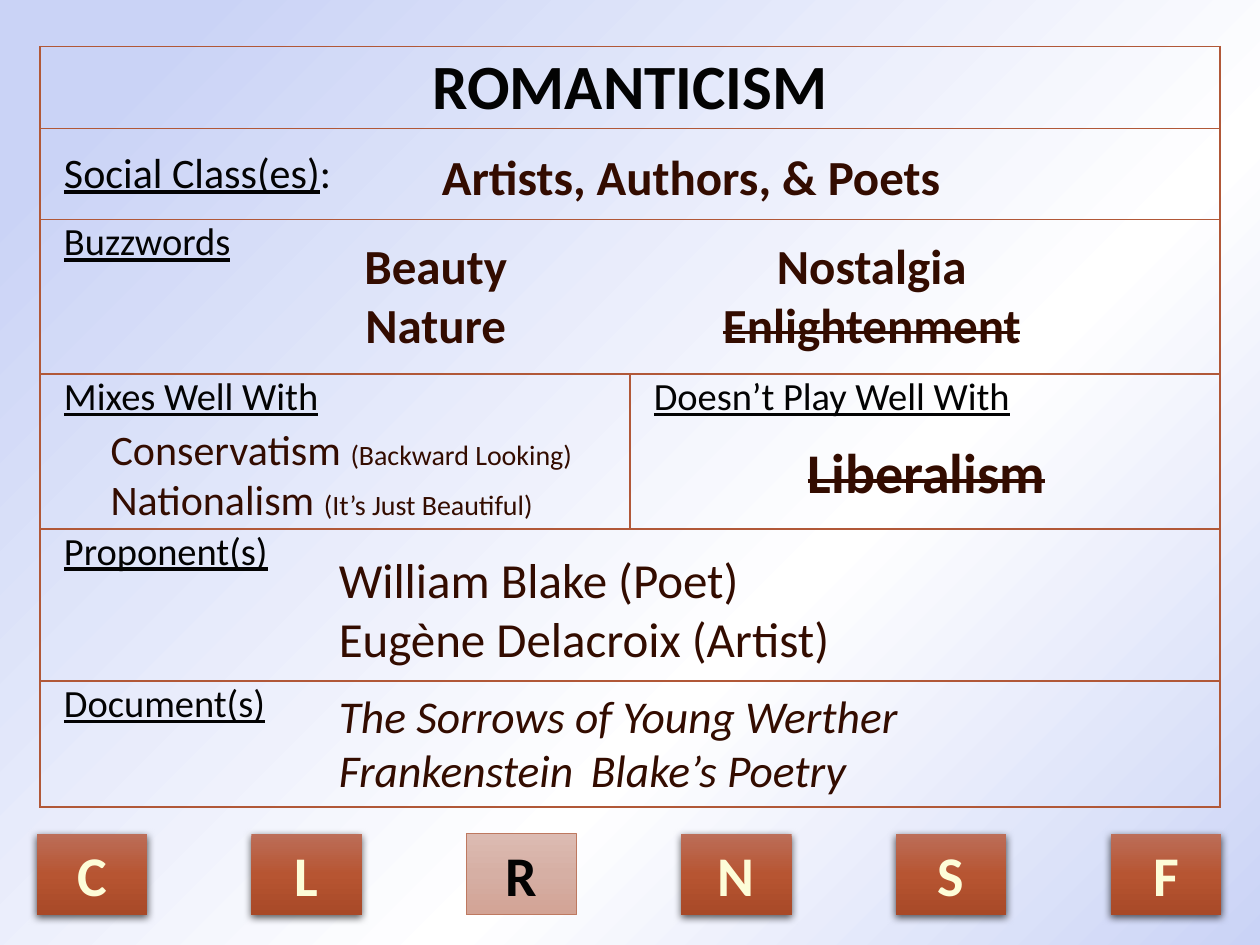
import copy
from dataclasses import dataclass

import lxml.etree
import pptx
import pptx.dml.color
import pptx.enum.shapes
import pptx.enum.text
import pptx.oxml.ns
import pptx.util

Cm = pptx.util.Cm
Pt = pptx.util.Pt
qn = pptx.oxml.ns.qn
ALIGN = pptx.enum.text.PP_ALIGN
ANCHOR = pptx.enum.text.MSO_ANCHOR
SIZING = pptx.enum.text.MSO_AUTO_SIZE


@dataclass(frozen=True)
class Theme:
    font: str = "Calibri"
    black: str = "030303"
    brown: str = "330C00"
    cream: str = "FDFDD8"
    grid: str = "B15838"
    edge: str = "BE7960"
    back: tuple = ((9, "CAD3F6"), (63, "FFFFFF"), (100, "CAD3F6"))
    rust: tuple = ((0, "BC6E59"), (50, "B75532"), (100, "A84927"))
    pale: tuple = ((0, "DCBBB2"), (50, "D6AFA4"), (100, "D2A395"))
    title: int = 36
    head: int = 32
    large: int = 28
    work: int = 26
    body: int = 24
    label: int = 22
    note: int = 16


THEME = Theme()


@dataclass(frozen=True)
class Run:
    text: str
    size: int
    color: str = THEME.brown
    bold: bool = False
    slant: bool = False
    under: bool = False
    strike: bool = False


@dataclass(frozen=True)
class Label:
    row: int
    col: int
    runs: tuple
    merge: bool = True
    align: object = ALIGN.LEFT
    middle: bool = False
    indent: float = 0.33
    before: float = 3


@dataclass(frozen=True)
class Box:
    left: float
    top: float
    width: float
    height: float
    lines: tuple
    align: object = ALIGN.LEFT
    wrap: bool = True
    indent: float = 0
    tab: float = 0
    split: bool = False


def tint(text: str):
    return pptx.dml.color.RGBColor.from_string(text)


def node(parent, tag: str, **attrs):
    return lxml.etree.SubElement(parent, qn(tag), attrs)


def blend(owner, fill, stops: tuple, angle: int) -> None:
    fill.gradient()
    fill.gradient_angle = angle
    group = next(owner.iter(qn("a:gsLst")))
    group.append(copy.deepcopy(group[-1]))
    for stop, (place, color) in zip(fill.gradient_stops, stops):
        stop.position = place / 100
        stop.color.rgb = tint(color)


def write(para, runs: tuple) -> None:
    for item in runs:
        run = para.add_run()
        run.text = item.text
        font = run.font
        font.name = THEME.font
        font.size = Pt(item.size)
        font.color.rgb = tint(item.color)
        font.bold = item.bold
        font.italic = item.slant
        font.underline = item.under
        if item.strike:
            run._r.get_or_add_rPr().set("strike", "sngStrike")


def inset(para, width: float) -> None:
    props = para._p.get_or_add_pPr()
    props.set("marL", str(Cm(width)))
    props.set("indent", "0")


def border(cell) -> None:
    props = cell._tc.get_or_add_tcPr()
    for place, side in enumerate(("a:lnL", "a:lnR", "a:lnT", "a:lnB")):
        line = lxml.etree.Element(qn(side), {"w": str(Pt(1))})
        node(node(line, "a:solidFill"), "a:srgbClr", val=THEME.grid)
        props.insert(place, line)


def draw_table(slide, rows: tuple, labels: tuple) -> None:
    width = 11.89
    table = slide.shapes.add_table(
        len(rows), 2, Cm(0.81), Cm(0.94), Cm(2 * width), Cm(sum(rows))
    ).table
    table.first_row = table.horz_banding = False
    for col in table.columns:
        col.width = Cm(width)
    for row, height in zip(table.rows, rows):
        row.height = Cm(height)
    for cell in table.iter_cells():
        cell.fill.background()
        border(cell)
        cell.margin_left = cell.margin_right = Cm(0.15)
        cell.margin_top = cell.margin_bottom = 0
    for label in labels:
        cell = table.cell(label.row, label.col)
        if label.merge:
            cell.merge(table.cell(label.row, 1))
        cell.vertical_anchor = ANCHOR.MIDDLE if label.middle else ANCHOR.TOP
        para = cell.text_frame.paragraphs[0]
        para.alignment = label.align
        para.space_before = Pt(label.before)
        inset(para, label.indent)
        write(para, label.runs)


def draw_box(slide, box: Box) -> None:
    shape = slide.shapes.add_textbox(
        Cm(box.left), Cm(box.top), Cm(box.width), Cm(box.height)
    )
    frame = shape.text_frame
    frame.word_wrap = box.wrap
    frame.auto_size = SIZING.SHAPE_TO_FIT_TEXT
    if box.split:
        frame.auto_size = SIZING.NONE
        frame.margin_bottom = Cm(1)
        frame._txBody.bodyPr.set("numCol", "2")
    for count, runs in enumerate(box.lines):
        para = frame.add_paragraph() if count else frame.paragraphs[0]
        para.alignment = box.align
        inset(para, box.indent)
        if box.tab:
            tabs = node(para._p.get_or_add_pPr(), "a:tabLst")
            node(tabs, "a:tab", pos=str(Cm(box.tab)), algn="l")
        write(para, runs)


def draw_key(slide, left: float, text: str, chosen: bool) -> None:
    shape = slide.shapes.add_shape(
        pptx.enum.shapes.MSO_SHAPE.RECTANGLE,
        Cm(left), Cm(16.81), Cm(2.23), Cm(1.63),
    )
    props = shape._element.spPr
    blend(props, shape.fill, THEME.pale if chosen else THEME.rust, 270)
    shape.shadow.inherit = False
    if chosen:
        shape.line.color.rgb = tint(THEME.edge)
        shape.line.width = Pt(0.5)
    else:
        shape.line.fill.background()
        shade = node(
            props.find(qn("a:effectLst")), "a:outerShdw",
            blurRad=str(Pt(4.5)), dist=str(Pt(1.5)), dir="5400000", rotWithShape="0",
        )
        node(node(shade, "a:srgbClr", val="000000"), "a:alpha", val="63000")
    para = shape.text_frame.paragraphs[0]
    para.alignment = ALIGN.CENTER
    color = THEME.black if chosen else THEME.cream
    write(para, (Run(text, THEME.head, color, bold=True),))


def tag(text: str) -> tuple:
    return (Run(text, THEME.label, THEME.black, under=True),)


def big(text: str, **style) -> tuple:
    return (Run(text, THEME.large, **style),)


def pair(text: str, note: str) -> tuple:
    return (Run(text, THEME.body), Run(note, THEME.note))


ROWS = (1.65, 1.83, 3.12, 3.12, 3.07, 2.54)
LABELS = (
    Label(0, 0, (Run("ROMANTICISM", THEME.title, THEME.black, bold=True),),
          align=ALIGN.CENTER, middle=True, indent=0, before=0),
    Label(1, 0, (Run("Social Class(es)", THEME.body, THEME.black, under=True),
                 Run(":", THEME.body, THEME.black)), middle=True, before=0),
    Label(2, 0, tag("Buzzwords")),
    Label(3, 0, tag("Mixes Well With"), merge=False),
    Label(3, 1, tag("Doesn’t Play Well With"), merge=False),
    Label(4, 0, tag("Proponent(s)")),
    Label(5, 0, tag("Document(s)")),
)
BOXES = (
    Box(8.43, 2.82, 11.4, 1.45, (big("Artists, Authors, & Poets", bold=True),),
        wrap=False, indent=0.23),
    Box(1.98, 8.41, 10.77, 2.31, (pair("Conservatism ", "(Backward Looking)"),
                                  pair("Nationalism ", "(It’s Just Beautiful)"))),
    Box(12.7, 8.69, 11.96, 1.63,
        ((Run("Liberalism", THEME.head, bold=True, strike=True),),), ALIGN.CENTER),
    Box(6.58, 10.95, 14.43, 2.64,
        (big("William Blake (Poet)"), big("Eugène Delacroix (Artist)"))),
    Box(6.58, 13.74, 15.14, 2.49,
        ((Run("The Sorrows of Young Werther", THEME.work, slant=True),),
         (Run("Frankenstein\tBlake’s Poetry", THEME.work, slant=True),)), tab=7.62),
    Box(4.14, 4.62, 18.08, 3.84,
        (big("Beauty", bold=True), big("Nature", bold=True),
         big("Nostalgia", bold=True), big("Enlightenment", bold=True, strike=True)),
        ALIGN.CENTER, split=True),
)


def main() -> None:
    deck = pptx.Presentation()
    deck.slide_width, deck.slide_height = Cm(25.4), Cm(19.05)
    slide = deck.slides.add_slide(deck.slide_layouts[6])
    blend(slide.element, slide.background.fill, THEME.back, 315)
    draw_table(slide, ROWS, LABELS)
    for box in BOXES:
        draw_box(slide, box)
    for count, text in enumerate("CLRNSF"):
        draw_key(slide, 0.74 + 4.33 * count, text, text == "R")
    deck.save("out.pptx")


if __name__ == "__main__":
    main()
